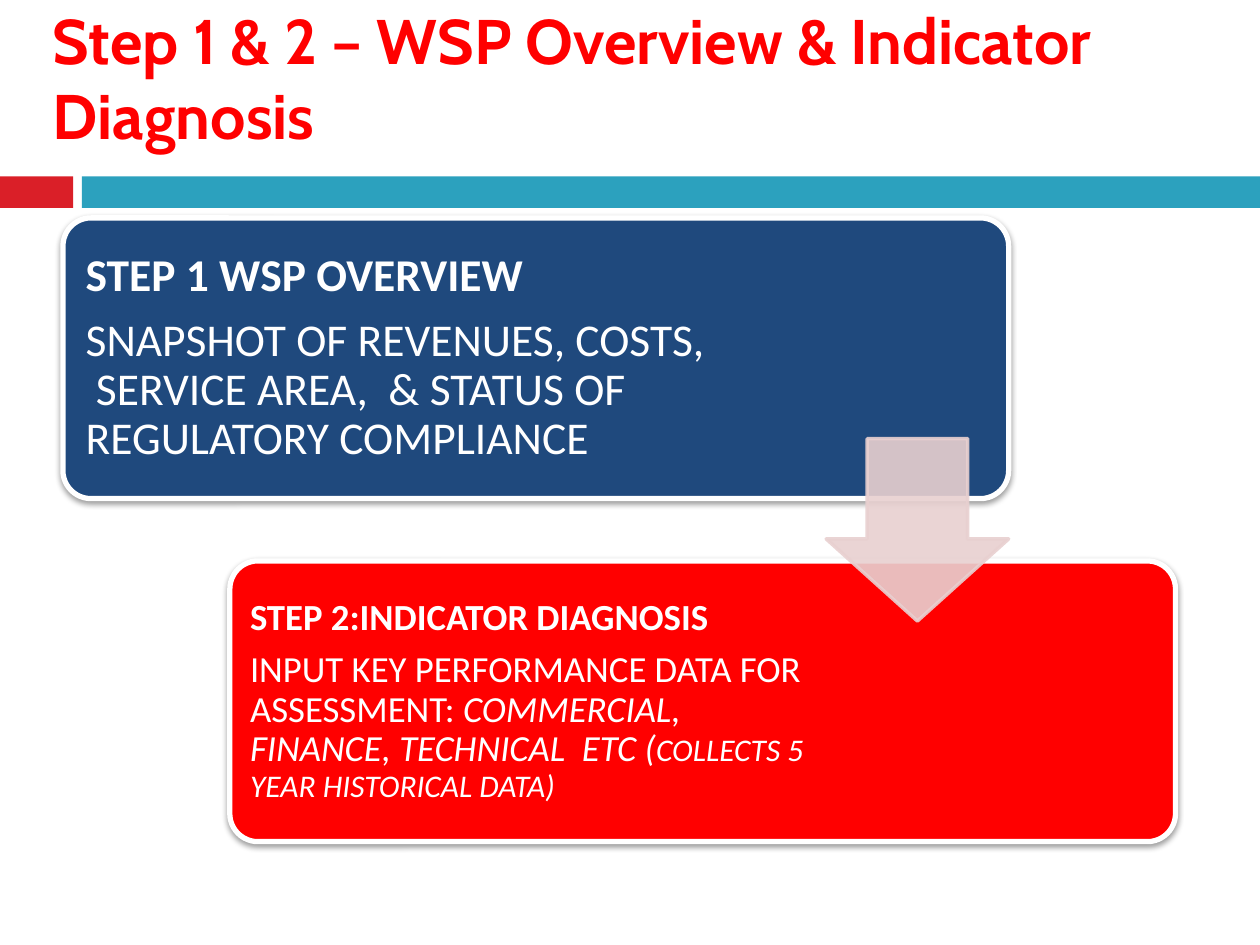
from lxml.etree import SubElement
from pptx import Presentation
from pptx.dml.color import RGBColor
from pptx.enum.shapes import MSO_SHAPE
from pptx.enum.text import MSO_ANCHOR, PP_ALIGN
from pptx.oxml.ns import qn
from pptx.util import Inches, Pt

COLUMN = Inches(1)
ROW = Inches(1)
COLUMNS, ROWS = 10, 7.5

WHITE = RGBColor(0xFF, 0xFF, 0xFF)
BLACK = RGBColor(0, 0, 0)
RED = RGBColor(0xFF, 0, 0)
CRIMSON = RGBColor(0xDA, 0x1F, 0x28)
TEAL = RGBColor(0x2C, 0xA1, 0xBE)
NAVY = RGBColor(0x1F, 0x49, 0x7D)
BLUSH = RGBColor(0xE8, 0xD0, 0xD0)


def place(box):
    left, top, width, height = box
    return [round(length) for length in
            (left * COLUMN, top * ROW, width * COLUMN, height * ROW)]


def set_alpha(color_element, percent):
    SubElement(color_element, qn("a:alpha"), val=str(percent * 1000))


def add_text(page, box, paragraphs, *, size, font="Calibri", color=WHITE,
             inset=0.0, anchor=MSO_ANCHOR.TOP, spacing=1.0, after=0):
    frame = page.shapes.add_textbox(*place(box)).text_frame
    frame.word_wrap = True
    frame.vertical_anchor = anchor
    frame.margin_left = frame.margin_right = Inches(inset)
    frame.margin_top = frame.margin_bottom = Inches(inset)
    for index, spans in enumerate(paragraphs):
        para = frame.add_paragraph() if index else frame.paragraphs[0]
        para.alignment = PP_ALIGN.LEFT
        para.line_spacing = spacing
        para.space_after = Pt(after)
        for text, style in spans:
            span = para.add_run()
            span.text = text
            span.font.name = font
            span.font.size = Pt(style.get("size", size))
            span.font.bold = style.get("bold", False)
            span.font.italic = style.get("italic", False)
            span.font.color.rgb = color


def add_figure(page, kind, box, fill, *, line=None, weight=0, adjustments=()):
    figure = page.shapes.add_shape(kind, *place(box))
    figure.shadow.inherit = False
    figure.fill.solid()
    figure.fill.fore_color.rgb = fill
    if line is None:
        figure.line.fill.background()
    else:
        figure.line.color.rgb = line
        figure.line.width = Pt(weight)
    for index, value in enumerate(adjustments):
        figure.adjustments[index] = value
    return figure


def add_shadow(figure):
    effects = figure.element.spPr.find(qn("a:effectLst"))
    shadow = SubElement(effects, qn("a:outerShdw"), blurRad=str(Pt(3.1)),
                        dist=str(Pt(1.6)), dir="5400000", rotWithShape="0")
    set_alpha(SubElement(shadow, qn("a:srgbClr"), val=str(BLACK)), 38)


def add_band(page, box):
    left, top, width, height = box
    tab, gap = 0.58, 0.07
    add_figure(page, MSO_SHAPE.RECTANGLE, (left, top, tab, height), CRIMSON)
    add_figure(page, MSO_SHAPE.RECTANGLE,
               (left + tab + gap, top, width - tab - gap, height), TEAL)


def add_title(page, box):
    title = "Step 1 & 2 – WSP Overview & Indicator Diagnosis"
    add_text(page, box, [[(title, {"bold": True})]],
             size=36, font="Cabin", color=RED)


def add_step(page, box, fill, heading, body, *, text_width, size, inset):
    left, top, width, height = box
    card = add_figure(page, MSO_SHAPE.ROUNDED_RECTANGLE, box, fill,
                      line=WHITE, weight=3, adjustments=[0.1])
    add_shadow(card)
    pad = 0.07
    add_text(page, (left + pad, top + pad, text_width, height - 2 * pad),
             [[(heading, {"bold": True})], body], size=size, inset=inset,
             anchor=MSO_ANCHOR.MIDDLE, spacing=0.9, after=round(size * 0.35))


def add_down_arrow(page, box):
    arrow = add_figure(page, MSO_SHAPE.DOWN_ARROW, box, BLUSH,
                       line=BLUSH, weight=2, adjustments=[0.55, 0.45])
    for color_element in arrow.element.spPr.iter(qn("a:srgbClr")):
        set_alpha(color_element, 90)


def add_steps(page, box):
    left, top, width, height = box
    card_width, card_height = width * 0.85, height * 0.45
    second_left = left + width - card_width
    second_top = top + height - card_height
    add_step(page, (left, top, card_width, card_height), NAVY,
             "STEP 1 WSP OVERVIEW",
             [("SNAPSHOT OF REVENUES, COSTS,  SERVICE AREA,  & STATUS OF "
               "REGULATORY COMPLIANCE", {})],
             text_width=5.21, size=26, inset=0.11)
    add_step(page, (second_left, second_top, card_width, card_height), RED,
             "STEP 2:INDICATOR DIAGNOSIS",
             [("INPUT KEY PERFORMANCE DATA FOR ASSESSMENT: ", {}),
              ("COMMERCIAL, FINANCE, TECHNICAL  ETC (", {"italic": True}),
              ("COLLECTS 5 YEAR HISTORICAL DATA)",
               {"italic": True, "size": 18})],
             text_width=4.6, size=21, inset=0.09)
    side = card_height * 0.65
    middle = top + height / 2
    add_down_arrow(page, (left + card_width - side, middle - side / 2,
                          side, side))


def main():
    deck = Presentation()
    deck.slide_width = round(COLUMNS * COLUMN)
    deck.slide_height = round(ROWS * ROW)
    page = deck.slides.add_slide(deck.slide_layouts[6])
    add_band(page, (0, 1.4, COLUMNS, 0.25))
    add_title(page, (0.42, 0.01, 9.15, 1.23))
    add_steps(page, (0.5, 1.73, 8.83, 4.95))
    deck.save("out.pptx")


if __name__ == "__main__":
    main()
